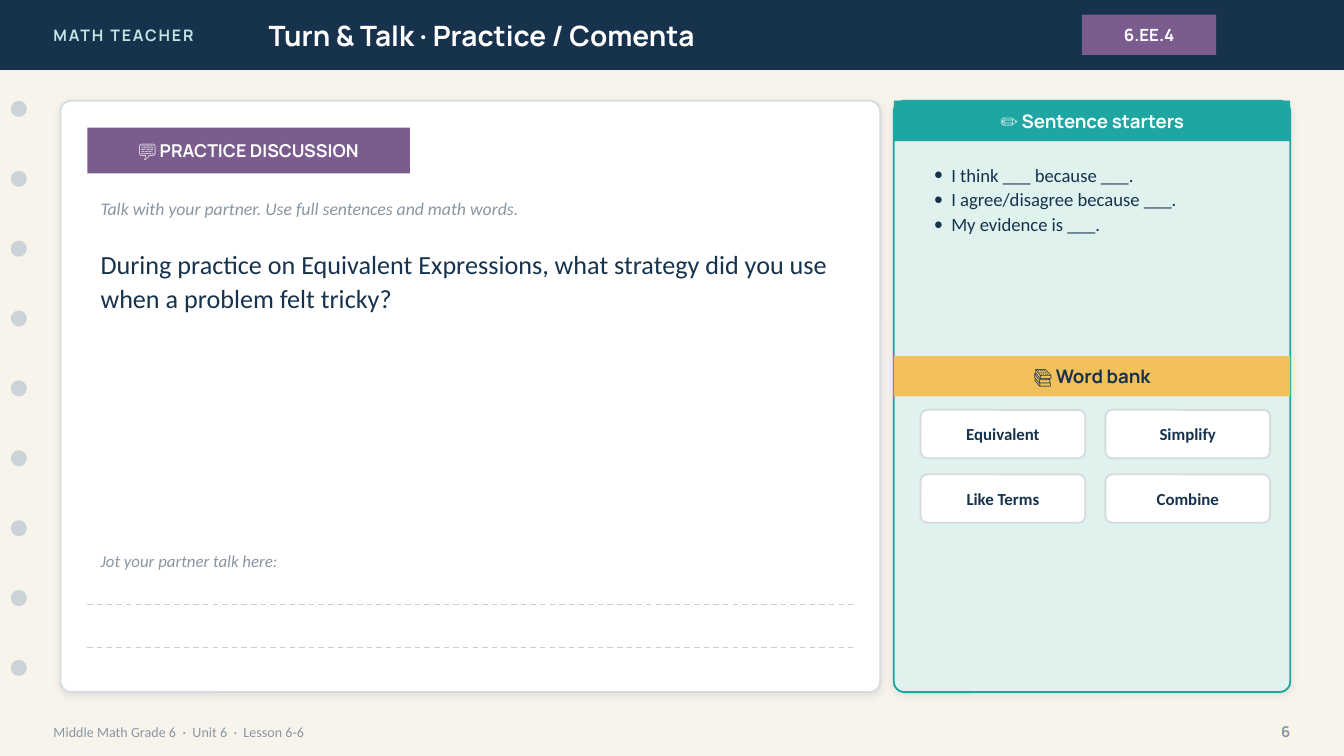
from lxml.etree import SubElement
from pptx import Presentation
from pptx.dml.color import RGBColor
from pptx.enum.dml import MSO_LINE
from pptx.enum.shapes import MSO_CONNECTOR, MSO_SHAPE
from pptx.enum.text import MSO_ANCHOR, PP_ALIGN
from pptx.oxml import parse_xml
from pptx.oxml.ns import nsdecls, qn
from pptx.util import Pt

PX = 4572  # 200 px to the inch
NAVY, TEAL, MINT, PURPLE, GOLD = "17324D", "1FA6A2", "DFF2EE", "7A5C8E", "F2C15B"
WHITE, GREY, BORDER = "FFFFFF", "8A96A3", "D6DBDF"
RECT, ROUNDED, OVAL = MSO_SHAPE.RECTANGLE, MSO_SHAPE.ROUNDED_RECTANGLE, MSO_SHAPE.OVAL
hex_color = RGBColor.from_string

deck = Presentation()
deck.slide_width, deck.slide_height = 2000 * PX, 1125 * PX
slide = deck.slides.add_slide(deck.slide_layouts[6])
slide.background.fill.solid()
slide.background.fill.fore_color.rgb = hex_color("F7F4EC")


def place(kind, left, top, width, height, fill=None, line=None, radius=None):
    """Add a preset shape, or a text box when kind is None."""
    bounds = [length * PX for length in (left, top, width, height)]
    if kind is None:
        return slide.shapes.add_textbox(*bounds)
    shape = slide.shapes.add_shape(kind, *bounds)
    shape.shadow.inherit = False
    shape.fill.solid()
    shape.fill.fore_color.rgb = hex_color(fill)
    if line:
        shape.line.color.rgb = hex_color(line)
        shape.line.width = Pt(1)
    else:
        shape.line.fill.background()
    if radius:
        shape.adjustments[0] = radius / min(width, height)
    return shape


def write(shape, text, size, color, font="Calibri", bold=False, italic=False,
          align=PP_ALIGN.LEFT, anchor=MSO_ANCHOR.MIDDLE, leading=None,
          tracking=None, bullet_indent=None):
    frame = shape.text_frame
    frame.word_wrap = True
    frame.vertical_anchor = anchor
    for index, content in enumerate(text.split("\n")):
        paragraph = frame.add_paragraph() if index else frame.paragraphs[0]
        paragraph.alignment = align
        if leading:
            paragraph.line_spacing = leading
        if bullet_indent:
            properties = paragraph._p.get_or_add_pPr()
            properties.set("marL", str(bullet_indent * PX))
            properties.set("indent", str(-bullet_indent * PX))
            SubElement(properties, qn("a:buFont"), typeface=font)
            SubElement(properties, qn("a:buChar"), char="•")
        run = paragraph.add_run()
        run.text = content
        run.font.name, run.font.size = font, Pt(size)
        run.font.bold, run.font.italic = bold, italic
        run.font.color.rgb = hex_color(color)
        if tracking:
            run._r.get_or_add_rPr().set("spc", str(tracking))


heading = {"font": "Manrope", "bold": True}
centred = {**heading, "align": PP_ALIGN.CENTER}

# Header bar
place(RECT, 0, 0, 2000, 104, NAVY)
write(place(None, 60, 0, 480, 104), "MATH TEACHER", 8.5, "BFE6E2", tracking=100, **heading)
write(place(None, 380, 0, 1120, 104), "Turn & Talk · Practice / Comenta", 15, WHITE, **heading)
write(place(RECT, 1610, 22, 200, 60, PURPLE), "6.EE.4", 9, WHITE, **centred)

# Binder holes
for hole in range(9):
    place(OVAL, 16, 150 + 104 * hole, 24, 24, "CBD3D9")

# Footer
write(place(None, 60, 1061, 1400, 56), "Middle Math Grade 6  ·  Unit 6  ·  Lesson 6-6", 7.5, GREY)
write(place(None, 1840, 1061, 100, 56), "6", 8, GREY, align=PP_ALIGN.RIGHT, **heading)

# Cards
discussion_card = place(ROUNDED, 90, 150, 1220, 880, WHITE, BORDER, radius=16)
support_card = place(ROUNDED, 1330, 150, 590, 880, MINT, TEAL, radius=16)
for card in (discussion_card, support_card):
    card._element.spPr.find(qn("a:effectLst")).append(parse_xml(
        f'<a:outerShdw {nsdecls("a")} blurRad="{Pt(4)}" dist="{Pt(1)}" dir="5400000" '
        'algn="bl" rotWithShape="0"><a:srgbClr val="1C2E42"><a:alpha val="10000"/>'
        '</a:srgbClr></a:outerShdw>'))

# Discussion
write(place(RECT, 130, 190, 480, 68, PURPLE), "💬 PRACTICE DISCUSSION", 9.5, WHITE, **centred)
write(place(None, 130, 280, 1140, 60),
      "Talk with your partner. Use full sentences and math words.", 9.5, GREY, italic=True)
write(place(None, 130, 356, 1140, 400),
      "During practice on Equivalent Expressions, what strategy did you use "
      "when a problem felt tricky?", 14, NAVY, anchor=MSO_ANCHOR.TOP, leading=1.08)
write(place(None, 130, 810, 1140, 50), "Jot your partner talk here:", 9, GREY, italic=True)
for y in (900, 964):
    writing_line = slide.shapes.add_connector(
        MSO_CONNECTOR.STRAIGHT, 130 * PX, y * PX, 1270 * PX, y * PX)
    writing_line.line.color.rgb = hex_color("C7CDD2")
    writing_line.line.width = Pt(0.75)
    writing_line.line.dash_style = MSO_LINE.DASH
    SubElement(writing_line._element.spPr, qn("a:effectLst"))

# Sentence starters
write(place(RECT, 1330, 150, 590, 60, TEAL), "✏️ Sentence starters", 10, WHITE, **centred)
write(place(None, 1370, 230, 520, 280),
      "I think ___ because ___.\nI agree/disagree because ___.\nMy evidence is ___.",
      10, NAVY, anchor=MSO_ANCHOR.TOP, leading=1.1, bullet_indent=26)

# Word bank
write(place(RECT, 1330, 530, 590, 60, GOLD), "📚 Word bank", 10, NAVY, **centred)
for index, word in enumerate(["Equivalent", "Simplify", "Like Terms", "Combine"]):
    row, column = divmod(index, 2)
    chip = place(ROUNDED, 1370 + 275 * column, 610 + 96 * row, 245, 72, WHITE, BORDER, radius=10)
    write(chip, word, 9, NAVY, bold=True, align=PP_ALIGN.CENTER)

deck.save("out.pptx")
